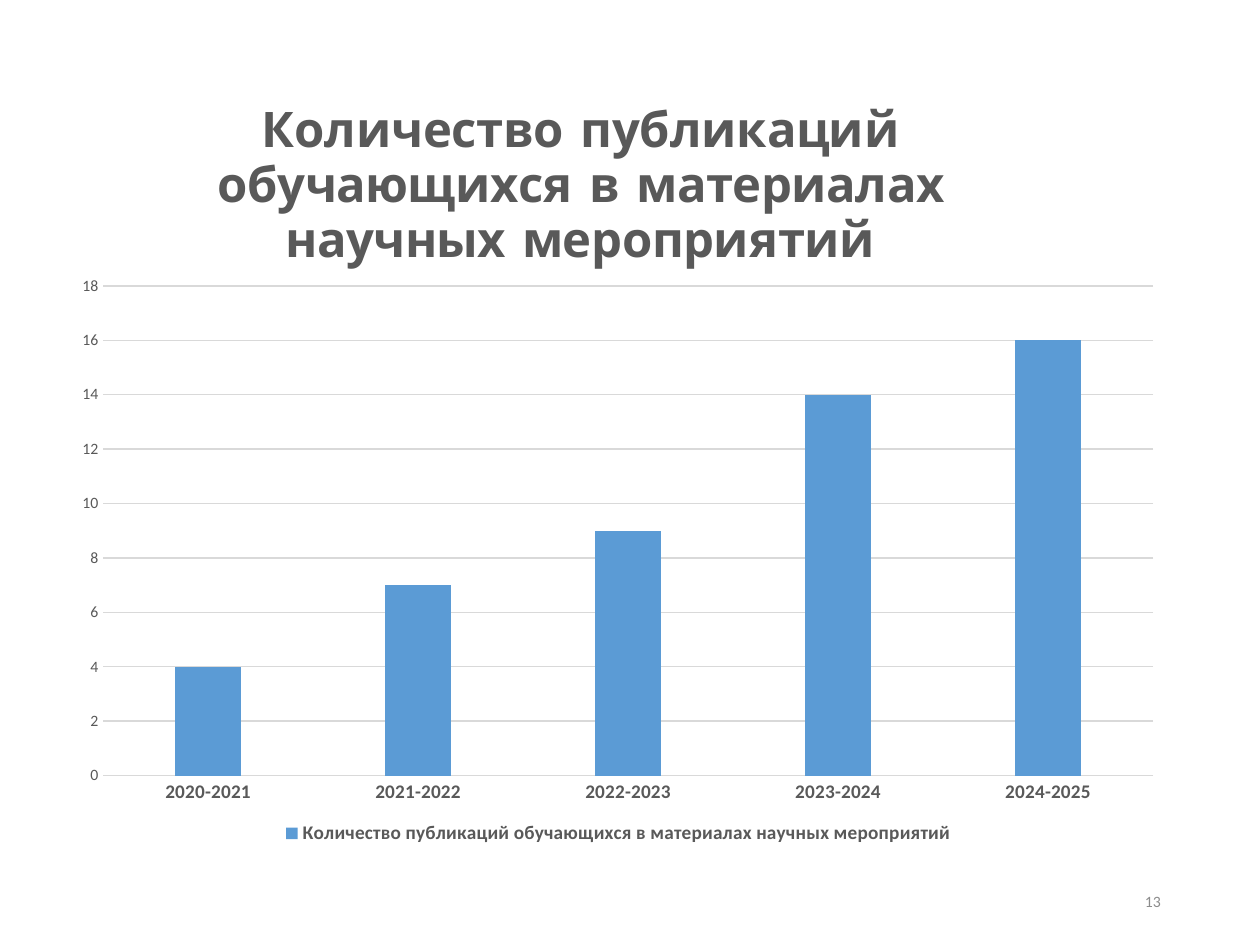
from dataclasses import dataclass
from typing import Any

from lxml import etree
from pptx import Presentation
from pptx.chart.data import CategoryChartData
from pptx.dml.color import RGBColor
from pptx.enum.chart import XL_CHART_TYPE, XL_LEGEND_POSITION, XL_TICK_MARK
from pptx.enum.text import MSO_ANCHOR, PP_ALIGN
from pptx.oxml.ns import qn
from pptx.util import Cm, Pt

COLUMNS = XL_CHART_TYPE.COLUMN_CLUSTERED
BOTTOM = XL_LEGEND_POSITION.BOTTOM
NO_TICKS = XL_TICK_MARK.NONE
MIDDLE = MSO_ANCHOR.MIDDLE
RIGHT = PP_ALIGN.RIGHT

COLORS = {
    "background": "FFFFFF",
    "text": "595959",
    "page": "8C8C8C",
    "grid": "D9D9D9",
    "bars": "5B9BD5",
}
HEADING = "Количество публикаций обучающихся в материалах научных мероприятий"
PUBLICATIONS = {
    "2020-2021": 4,
    "2021-2022": 7,
    "2022-2023": 9,
    "2023-2024": 14,
    "2024-2025": 16,
}


@dataclass(frozen=True)
class TextStyle:
    size: float
    bold: bool = False
    color: str = "text"
    name: str = "Calibri"


HEADING_STYLE = TextStyle(28, bold=True, name="Comic Neue")
LABEL_STYLE = TextStyle(11, bold=True)
SCALE_STYLE = TextStyle(9)
PAGE_STYLE = TextStyle(9, color="page")


def rgb(color: str) -> RGBColor:
    return RGBColor.from_string(COLORS[color])


def set_attributes(target: Any, values: dict[str, Any]) -> None:
    for attribute, value in values.items():
        setattr(target, attribute, value)


def style_font(font: Any, style: TextStyle) -> None:
    set_attributes(
        font, {"size": Pt(style.size), "bold": style.bold, "name": style.name}
    )
    font.color.rgb = rgb(style.color)


def style_line(line: Any) -> None:
    line.color.rgb = rgb("grid")
    line.width = Pt(0.75)


def set_layout(parent: Any, position: int, values: dict[str, Any]) -> None:
    """Place a chart part by hand, in fractions of the chart area."""
    for old_layout in parent.findall(qn("c:layout")):
        parent.remove(old_layout)
    layout = etree.Element(qn("c:layout"))
    manual = etree.SubElement(layout, qn("c:manualLayout"))
    for tag, value in values.items():
        etree.SubElement(manual, qn(f"c:{tag}")).set("val", str(value))
    parent.insert(position, layout)


def add_publications_chart(slide: Any) -> None:
    data = CategoryChartData()
    data.categories = list(PUBLICATIONS)
    data.add_series(HEADING, list(PUBLICATIONS.values()))
    chart = slide.shapes.add_chart(
        COLUMNS, Cm(1.3), Cm(1.32), Cm(22.35), Cm(15.82), data
    ).chart
    style_font(chart.font, SCALE_STYLE)

    heading = chart.chart_title.text_frame.paragraphs[0].add_run()
    heading.text = HEADING
    style_font(heading.font, HEADING_STYLE)
    edges = {"xMode": "edge", "yMode": "edge"}
    set_layout(chart.chart_title._element, 1, edges | {"x": 0.13, "y": 0.03})
    plot_box = {"x": 0.035, "y": 0.281, "w": 0.947, "h": 0.624}
    set_layout(
        chart._chartSpace.chart.plotArea,
        0,
        {"layoutTarget": "inner"} | edges | plot_box,
    )

    plot = chart.plots[0]
    set_attributes(
        plot, {"gap_width": 219, "overlap": -27, "vary_by_categories": False}
    )
    bars = plot.series[0]
    bars.invert_if_negative = False
    bars.format.fill.solid()
    bars.format.fill.fore_color.rgb = rgb("bars")

    years, scale = chart.category_axis, chart.value_axis
    for axis, style in ((years, LABEL_STYLE), (scale, SCALE_STYLE)):
        set_attributes(
            axis, {"major_tick_mark": NO_TICKS, "minor_tick_mark": NO_TICKS}
        )
        style_font(axis.tick_labels.font, style)
    style_line(years.format.line)
    set_attributes(
        scale, {"minimum_scale": 0, "maximum_scale": 18, "major_unit": 2}
    )
    scale.format.line.fill.background()
    style_line(scale.major_gridlines.format.line)

    chart.has_legend = True
    set_attributes(
        chart.legend, {"position": BOTTOM, "include_in_layout": False}
    )
    style_font(chart.legend.font, LABEL_STYLE)


def add_page_number(slide: Any, number: str) -> None:
    frame = slide.shapes.add_textbox(
        Cm(17.93), Cm(17.65), Cm(5.72), Cm(1.02)
    ).text_frame
    set_attributes(frame, {"word_wrap": True, "vertical_anchor": MIDDLE})
    paragraph = frame.paragraphs[0]
    paragraph.alignment = RIGHT
    page = paragraph.add_run()
    page.text = number
    style_font(page.font, PAGE_STYLE)


def main() -> None:
    presentation = Presentation()
    set_attributes(
        presentation, {"slide_width": Cm(25.4), "slide_height": Cm(19.05)}
    )
    slide = presentation.slides.add_slide(presentation.slide_layouts[6])
    slide.background.fill.solid()
    slide.background.fill.fore_color.rgb = rgb("background")
    add_publications_chart(slide)
    add_page_number(slide, "13")
    presentation.save("out.pptx")


if __name__ == "__main__":
    main()
